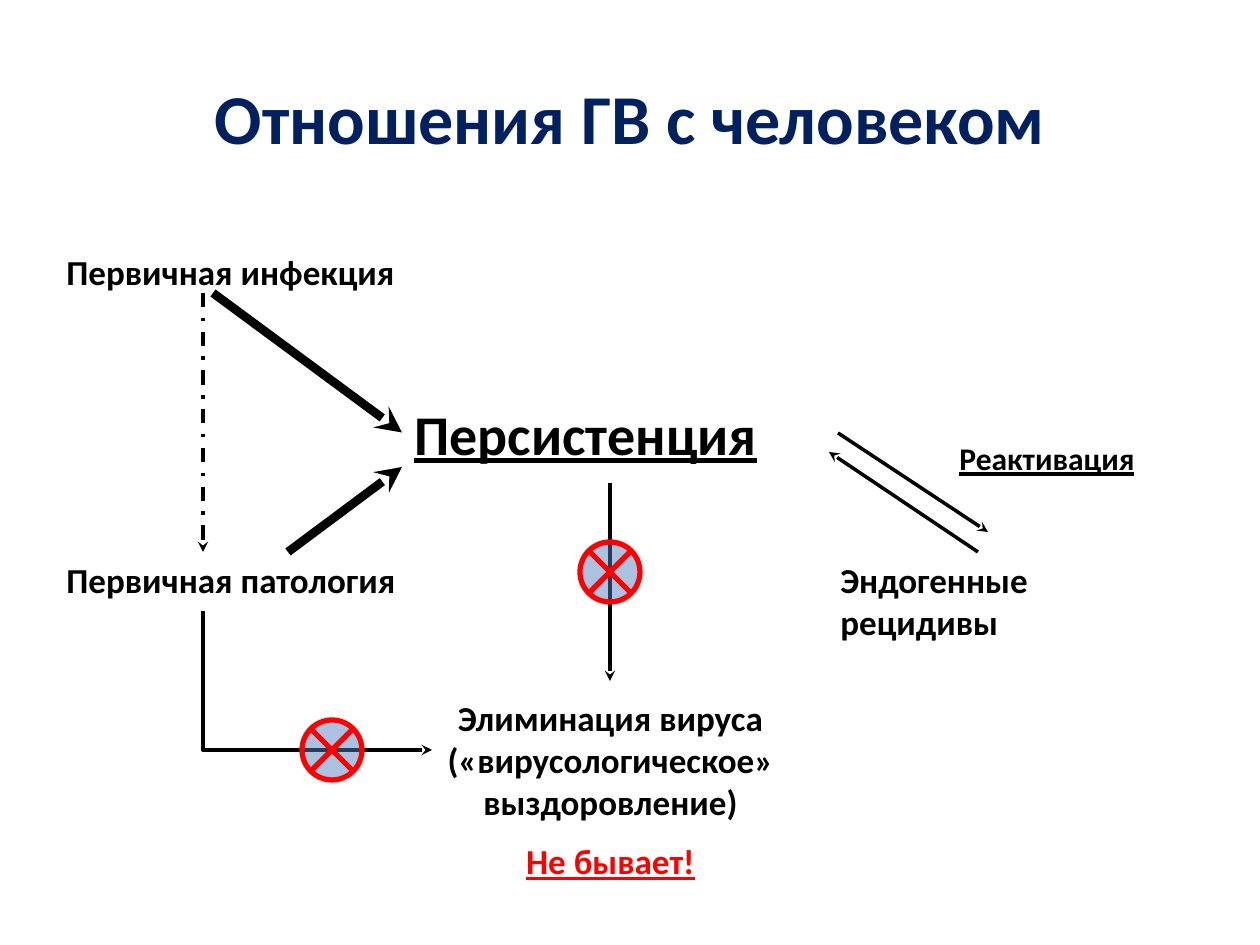
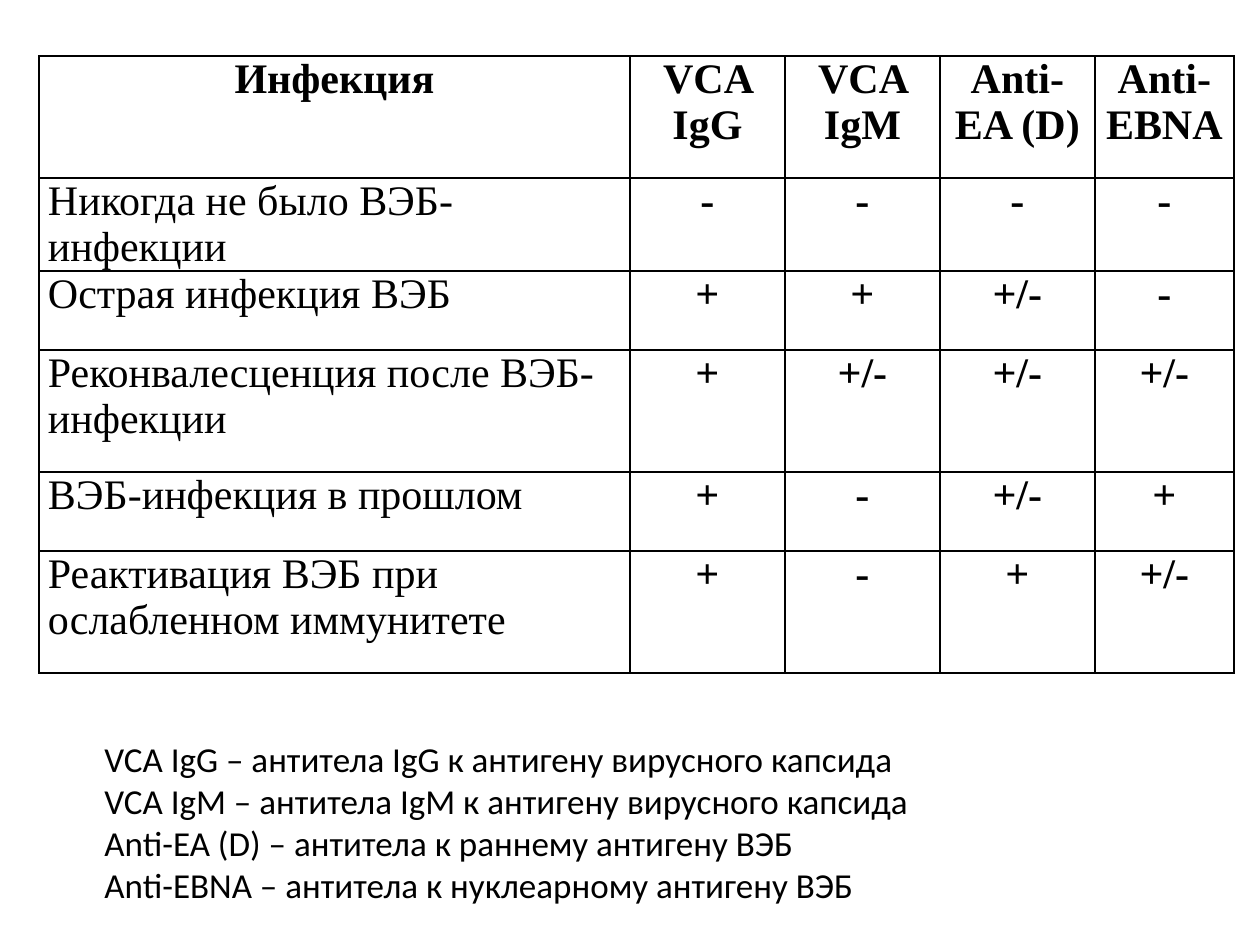
from lxml import etree
from pptx import Presentation
from pptx.dml.color import RGBColor
from pptx.enum.dml import MSO_LINE
from pptx.enum.shapes import MSO_CONNECTOR, MSO_SHAPE
from pptx.enum.text import MSO_ANCHOR, MSO_AUTO_SIZE, PP_ALIGN
from pptx.oxml.ns import qn
from pptx.util import Emu, Pt

EMU_PER_PX = 914400 / 126

BLACK = RGBColor(0x00, 0x00, 0x00)
NAVY = RGBColor(0x00, 0x20, 0x60)
RED = RGBColor(0xFF, 0x00, 0x00)
BLUE = RGBColor(0x4F, 0x81, 0xBD)

SANS = "Calibri"
SERIF = "Times New Roman"
LEFT, CENTER = PP_ALIGN.LEFT, PP_ALIGN.CENTER
MIDDLE = MSO_ANCHOR.MIDDLE
GROW = MSO_AUTO_SIZE.SHAPE_TO_FIT_TEXT
STRAIGHT = MSO_CONNECTOR.STRAIGHT
CROSSED_CIRCLE = MSO_SHAPE.FLOWCHART_SUMMING_JUNCTION
DASH_DOT = MSO_LINE.DASH_DOT
LEFT_SIDE = 1

TITLE_ONLY, BLANK = 5, 6
BAN_SIZE = 60

COLUMN_WIDTHS = [591, 155, 155, 155, 139]
ROW_HEIGHTS = [122, 79, 79, 122, 79, 122]
ANTIBODY_ROWS = [
    ["Инфекция", "VCA IgG", "VCA IgM", "Anti-\nEA (D)", "Anti-EBNA"],
    ["Никогда не было ВЭБ-инфекции", "-", "-", "-", "-"],
    ["Острая инфекция ВЭБ", "+", "+", "+/-", "-"],
    ["Реконвалесценция после ВЭБ-инфекции", "+", "+/-", "+/-", "+/-"],
    ["ВЭБ-инфекция в прошлом", "+", "-", "+/-", "+"],
    ["Реактивация ВЭБ при ослабленном иммунитете", "+", "-", "+", "+/-"],
]
LEGEND = """VCA IgG – антитела IgG к антигену вирусного капсида
VCA IgM – антитела IgM к антигену вирусного капсида
Anti-EA (D) – антитела к раннему антигену ВЭБ
Anti-EBNA – антитела к нуклеарному антигену ВЭБ"""


def px(*lengths):
    return [Emu(round(length * EMU_PER_PX)) for length in lengths]


# Text
def write(frame, text, size=20, font=SANS, color=BLACK, bold=True,
          underline=None, align=LEFT, append=False, space_before=None):
    """Write one paragraph per line of text, after what is there if append is set."""
    for number, line in enumerate(text.split("\n")):
        if append or number:
            paragraph = frame.add_paragraph()
        else:
            paragraph = frame.paragraphs[0]
        paragraph.alignment = align
        if space_before:
            paragraph.space_before = Pt(space_before)
        run = paragraph.add_run()
        run.text = line
        run.font.size = Pt(size)
        run.font.name = font
        run.font.bold = bold
        run.font.underline = underline
        run.font.color.rgb = color


def add_label(slide, box, text, wrap=True, **text_format):
    label = slide.shapes.add_textbox(*px(*box))
    label.text_frame.word_wrap = wrap
    label.text_frame.auto_size = GROW
    write(label.text_frame, text, **text_format)
    return label


def add_title(slide, text):
    title = slide.shapes.title
    title.left, title.top, title.width, title.height = px(63, 38, 1134, 157)
    title.text_frame.vertical_anchor = MIDDLE
    write(title.text_frame, text, size=40, color=NAVY, align=CENTER)


# Lines and arrows
def style_arrow(arrow, width):
    arrow.line.color.rgb = BLACK
    arrow.line.width = Pt(width)
    outline = arrow.element.spPr.find(qn("a:ln"))
    etree.SubElement(outline, qn("a:tailEnd"), type="stealth")


def add_arrow(slide, start, end, width=2, dash=None):
    arrow = slide.shapes.add_connector(STRAIGHT, *px(*start, *end))
    if dash:
        arrow.line.dash_style = dash
    style_arrow(arrow, width)
    etree.SubElement(arrow.element.spPr, qn("a:effectLst"))
    return arrow


def add_bent_arrow(slide, start, *points):
    builder = slide.shapes.build_freeform(*px(*start))
    builder.add_line_segments([px(*point) for point in points], close=False)
    bent = builder.convert_to_shape()
    bent.shadow.inherit = False
    bent.fill.background()
    style_arrow(bent, 2)


def add_ban_sign(slide, left, top):
    ban = slide.shapes.add_shape(CROSSED_CIRCLE, *px(left, top, BAN_SIZE, BAN_SIZE))
    ban.shadow.inherit = False
    ban.fill.solid()
    ban.fill.fore_color.rgb = BLUE
    fill_color = ban.element.spPr.find(qn("a:solidFill"))[0]
    etree.SubElement(fill_color, qn("a:alpha"), val="48000")
    ban.line.color.rgb = RED
    ban.line.width = Pt(3)


# Table
def add_borders(cell):
    properties = cell._tc.get_or_add_tcPr()
    for position, side in enumerate(("lnL", "lnR", "lnT", "lnB")):
        border = etree.Element(qn(f"a:{side}"), w=str(Pt(1)))
        fill = etree.SubElement(border, qn("a:solidFill"))
        etree.SubElement(fill, qn("a:srgbClr"), val=str(BLACK))
        properties.insert(position, border)


def add_antibody_table(slide):
    box = px(39, 56, sum(COLUMN_WIDTHS), sum(ROW_HEIGHTS))
    table = slide.shapes.add_table(len(ROW_HEIGHTS), len(COLUMN_WIDTHS), *box).table
    table.first_row = table.horz_banding = False
    for column, width in zip(table.columns, px(*COLUMN_WIDTHS)):
        column.width = width
    for row, height, texts in zip(table.rows, px(*ROW_HEIGHTS), ANTIBODY_ROWS):
        row.height = height
        for column_number, (cell, text) in enumerate(zip(row.cells, texts)):
            is_stage = column_number == 0 and texts is not ANTIBODY_ROWS[0]
            cell.margin_left, cell.margin_right = px(9, 9)
            cell.margin_top = cell.margin_bottom = 0
            cell.fill.background()
            add_borders(cell)
            write(cell.text_frame, text, size=24, font=SERIF, bold=not is_stage,
                  align=LEFT if is_stage else CENTER)


# Slides
def build_relations_slide(slide):
    add_title(slide, "Отношения ГВ с человеком")

    # Stages of the infection
    add_label(slide, (54, 244, 377, 55), "Первичная инфекция")
    persistence = add_label(slide, (402, 393, 446, 79), "Персистенция",
                            size=32, underline=True)
    add_label(slide, (828, 552, 377, 97), "Эндогенные рецидивы")
    add_label(slide, (54, 552, 377, 55), "Первичная патология")
    add_label(slide, (947, 433, 377, 50), "Реактивация", size=18, underline=True)

    # Paths between the stages
    to_persistence = add_arrow(slide, (213, 293), (402, 433), width=5)
    to_persistence.end_connect(persistence, LEFT_SIDE)
    add_arrow(slide, (203, 293), (203, 552), dash=DASH_DOT)
    add_arrow(slide, (288, 552), (402, 467), width=5)
    add_arrow(slide, (838, 433), (988, 532))
    add_arrow(slide, (978, 552), (829, 452))

    # Elimination, which does not happen
    elimination = add_label(slide, (422, 690, 377, 204),
                            "Элиминация вируса («вирусологическое» выздоровление)",
                            align=CENTER)
    write(elimination.text_frame, "Не бывает!", color=RED, underline=True,
          align=CENTER, append=True, space_before=10)
    add_arrow(slide, (610, 483), (610, 681))
    add_ban_sign(slide, 580, 542)
    add_bent_arrow(slide, (203, 611), (203, 750), (432, 750))
    add_ban_sign(slide, 302, 720)


def build_antibodies_slide(slide):
    add_antibody_table(slide)
    add_label(slide, (92, 731, 835, 183), LEGEND, wrap=False, bold=False)


def main():
    presentation = Presentation()
    presentation.slide_width, presentation.slide_height = px(1260, 945)
    layouts = presentation.slide_layouts
    build_relations_slide(presentation.slides.add_slide(layouts[TITLE_ONLY]))
    build_antibodies_slide(presentation.slides.add_slide(layouts[BLANK]))
    presentation.save("out.pptx")


if __name__ == "__main__":
    main()
